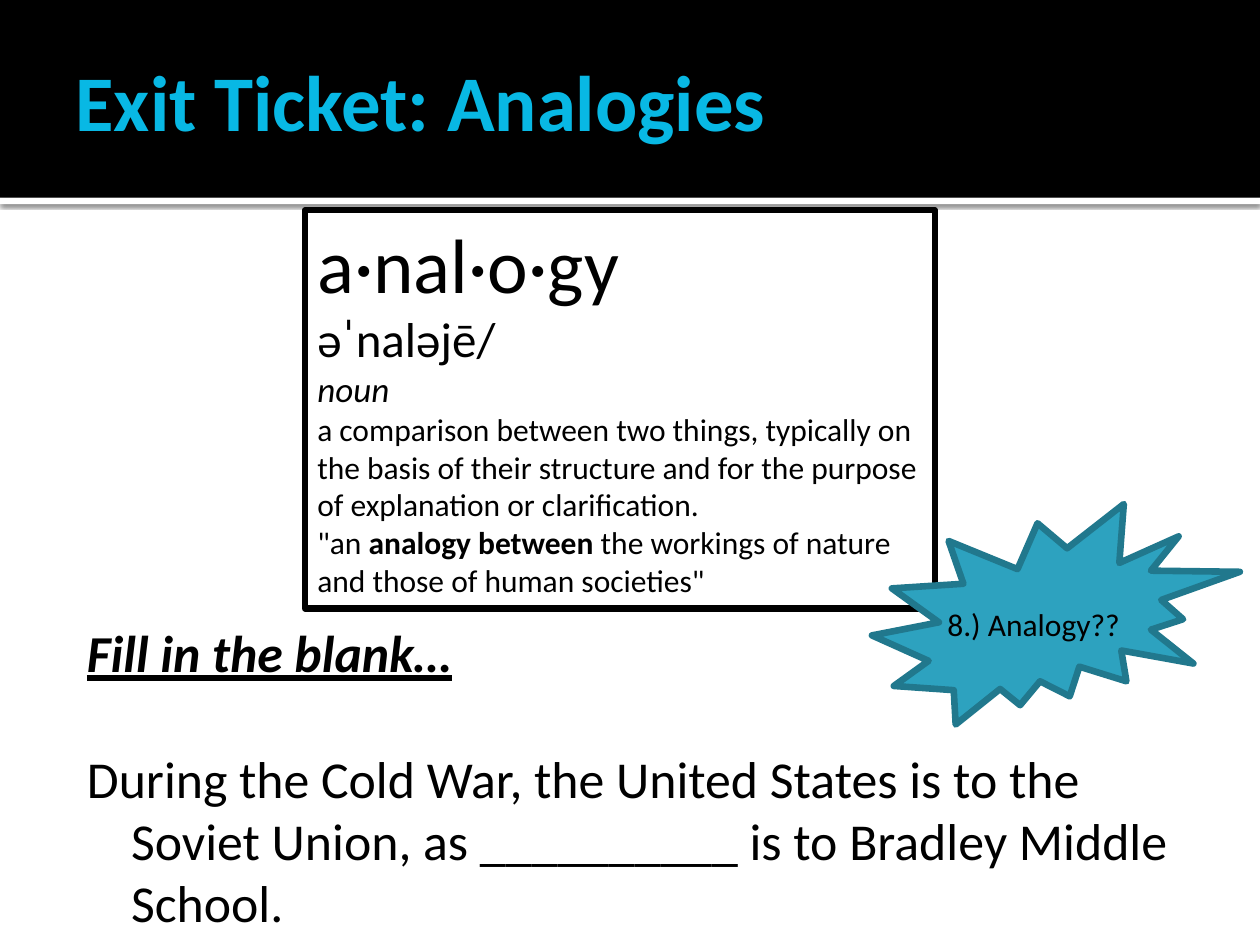
from lxml import etree
from pptx import Presentation
from pptx.dml.color import RGBColor
from pptx.enum.shapes import MSO_SHAPE
from pptx.enum.text import MSO_ANCHOR, MSO_AUTO_SIZE, PP_ALIGN
from pptx.oxml import parse_xml
from pptx.oxml.ns import qn
from pptx.util import Inches, Pt

RECTANGLE, BURST = MSO_SHAPE.RECTANGLE, MSO_SHAPE.EXPLOSION2
LEFT, TOP, MIDDLE = PP_ALIGN.LEFT, MSO_ANCHOR.TOP, MSO_ANCHOR.MIDDLE
COLORS = {"black": "000000", "white": "FFFFFF", "title": "08B8E4",
          "burst": "2DA2BF", "burst line": "21788D"}
FONT = "Calibri"
HEADER_HEIGHT = 1.57
BODY_SIZE = 29.6
BAND_SHADOW = (
    '<a:effectLst xmlns:a="http://schemas.openxmlformats.org/drawingml/2006/main">'
    '<a:outerShdw blurRad="31750" dist="10160" dir="5400000" algn="tl" rotWithShape="0">'
    '<a:srgbClr val="000000"><a:alpha val="60000"/></a:srgbClr>'
    '</a:outerShdw></a:effectLst>')


def add_block(shapes, kind, place, fill=None, line=None, width=0):
    shape = shapes.add_shape(kind, *map(Inches, place))
    shape.shadow.inherit = False
    if fill:
        shape.fill.solid()
        shape.fill.fore_color.rgb = RGBColor.from_string(COLORS[fill])
    else:
        shape.fill.background()
    if line:
        shape.line.color.rgb = RGBColor.from_string(COLORS[line])
        shape.line.width = Pt(width)
    else:
        shape.line.fill.background()
    return shape


def write(shape, paragraphs, margins, anchor=TOP, color="black"):
    """Fill a shape with paragraphs, each a list of (text, font values) runs."""
    frame = shape.text_frame
    frame.word_wrap, frame.auto_size = True, MSO_AUTO_SIZE.NONE
    frame.vertical_anchor = anchor
    for side, margin in zip(("left", "top", "right", "bottom"), margins):
        setattr(frame, f"margin_{side}", Inches(margin))
    for index, runs in enumerate(paragraphs):
        paragraph = frame.add_paragraph() if index else frame.paragraphs[0]
        paragraph.alignment, paragraph.space_before = LEFT, Pt(0)
        for text, values in runs:
            run = paragraph.add_run()
            run.text = text
            run.font.color.rgb = RGBColor.from_string(COLORS[color])
            for name, value in {"name": FONT, **values}.items():
                setattr(run.font, name, value)


presentation = Presentation()
presentation.slide_width, presentation.slide_height = Inches(10), Inches(7.5)
slide = presentation.slides.add_slide(presentation.slide_layouts[1])
title, body = slide.shapes.title, slide.placeholders[1]

# Header bands, behind the placeholders
white_band = add_block(slide.shapes, RECTANGLE, (0, HEADER_HEIGHT, 10, 0.05), "white")
white_band._element.spPr.remove(white_band._element.spPr.find(qn("a:effectLst")))
white_band._element.spPr.append(parse_xml(BAND_SHADOW))
black_band = add_block(slide.shapes, RECTANGLE, (0, 0, 10, HEADER_HEIGHT), "black")
for layer, shape in enumerate((white_band, black_band, body, title)):
    slide.shapes._spTree.insert(2 + layer, shape._element)

# Title and exercise
for placeholder, place in ((title, (0.5, 0.33, 9, 0.92)), (body, (0.5, 4.83, 9, 2.17))):
    placeholder.left, placeholder.top, placeholder.width, placeholder.height = map(Inches, place)
write(title, [[("Exit Ticket: Analogies", {"size": Pt(45), "bold": True})]],
      (0.1, 0.05, 0.05, 0.05), MIDDLE, "title")
write(body, [
    [("Fill in the blank…",
      {"size": Pt(BODY_SIZE), "bold": True, "italic": True, "underline": True})],
    [("During the Cold War, the United States is to the Soviet Union, "
      "as __________ is to Bradley Middle School.", {"size": Pt(BODY_SIZE)})],
], (0.06, 0.1, 0.1, 0.05))
for paragraph in body.text_frame.paragraphs:
    properties = paragraph._p.get_or_add_pPr()
    properties.set("marL", str(Inches(0.48)))
    properties.set("indent", str(Inches(-0.35)))
    etree.SubElement(properties, qn("a:buNone"))
body.text_frame.paragraphs[1].space_before = Pt(36)

# Definition
definition = add_block(slide.shapes, RECTANGLE, (2.42, 1.67, 5, 3.16), None, "black", 3.5)
small = {"size": Pt(18)}
write(definition, [
    [("a·nal·o·gy", {"size": Pt(44)})],
    [("əˈnaləjē/", {"size": Pt(28)})],
    [("noun", {"size": Pt(20), "italic": True})],
    [("a comparison between two things, typically on the basis of their structure "
      "and for the purpose of explanation or clarification.", small)],
    [('"an ', small), ("analogy between", {**small, "bold": True}),
     (' the workings of nature and those of human societies"', small)],
], (0.1, 0.05, 0.1, 0.05))

# Question burst
group = slide.shapes.add_group_shape()
add_block(group.shapes, BURST, (6.92, 4, 2.92, 1.75), "burst", "burst line", 3.78)
label = group.shapes.add_textbox(*map(Inches, (7.42, 4.75, 1.92, 0.4)))
write(label, [[("8.) Analogy??", small)]], (0.1, 0.05, 0.1, 0.05))

presentation.save("out.pptx")
